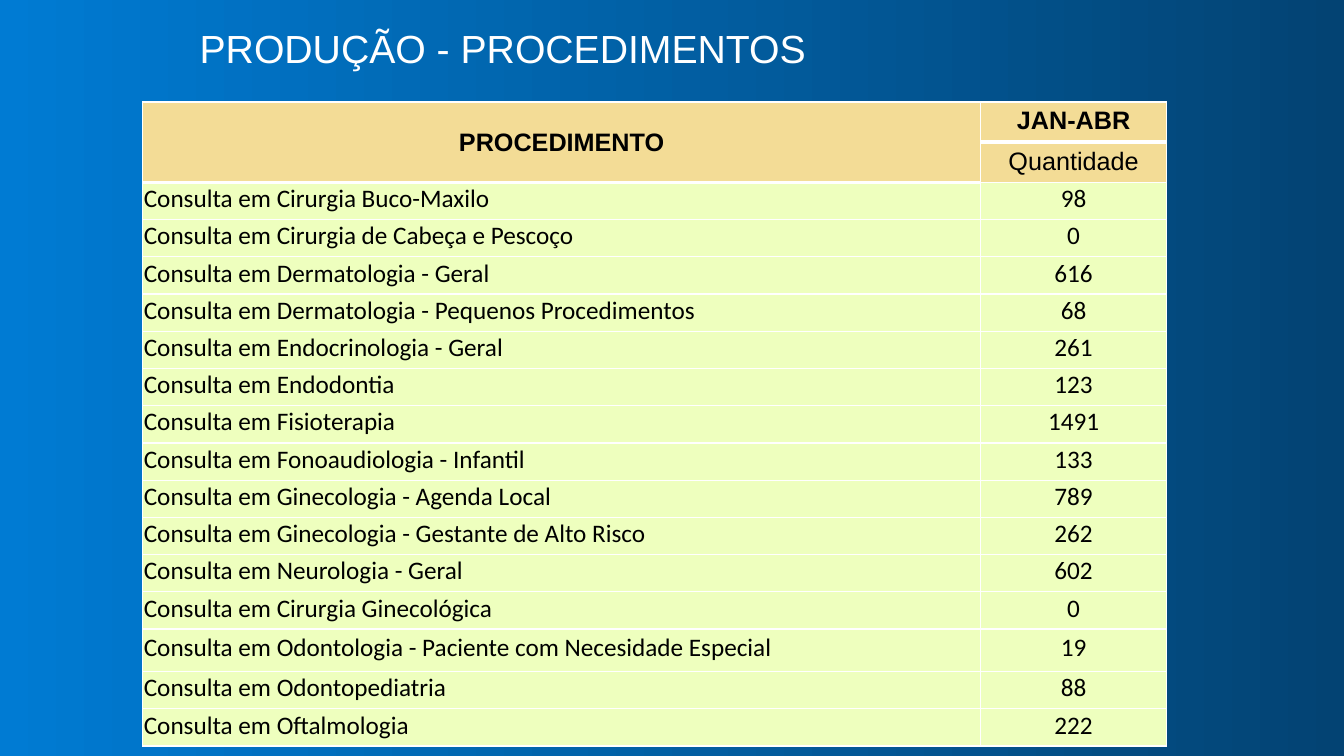
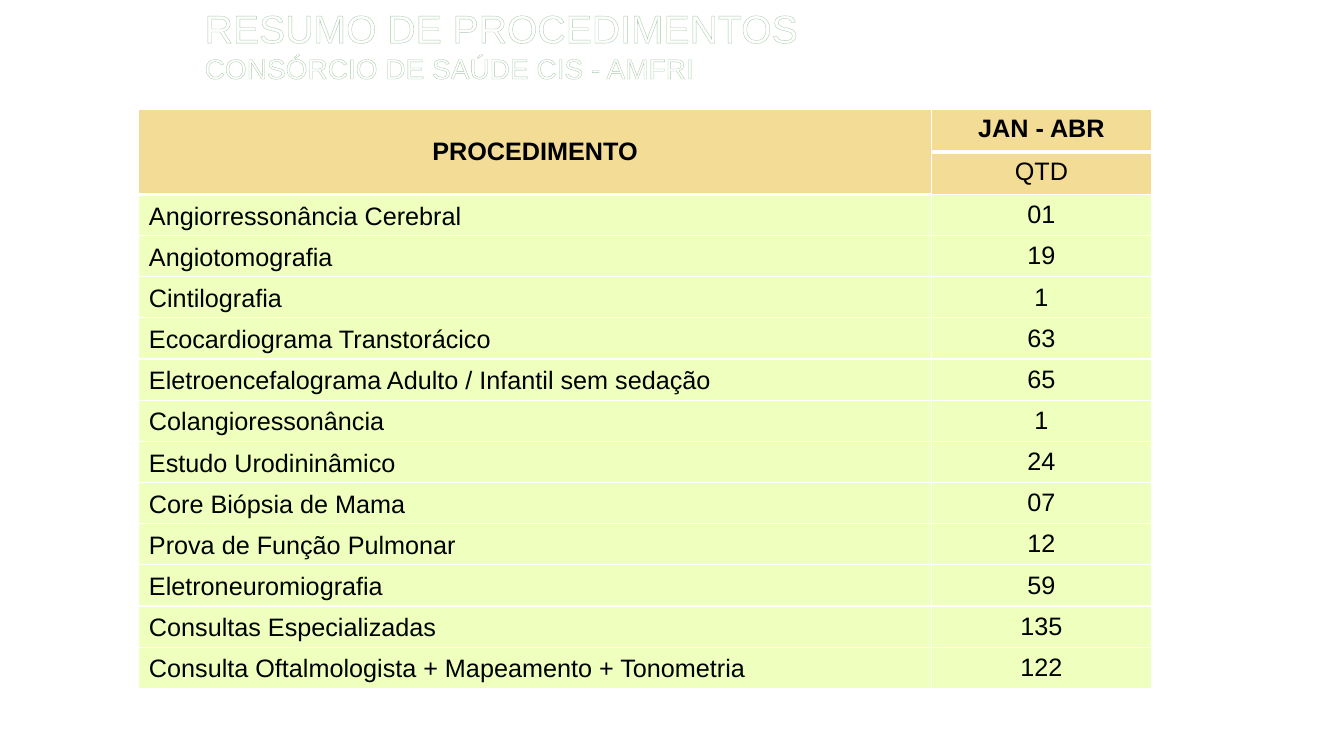
from pptx import Presentation
from pptx.dml.color import RGBColor
from pptx.enum.text import MSO_ANCHOR as Anchor, PP_ALIGN as Align
from pptx.oxml import parse_xml
from pptx.oxml.ns import nsdecls
from pptx.util import Pt

WHITE, BLACK, GOLD, LIME = "FFFFFF", "000000", "F3DC96", "EEFFBE"
BLUE, NAVY, MINT = "007BD3", "034373", "AACAAA"

SLIDES = [
    {
        "back": [BLUE, NAVY],
        "title": [("PRODUÇÃO - PROCEDIMENTOS", 28)],
        "outline": None,
        "title_box": (135.4, 0, 756, 67.7),
        "origin": (102, 72.9),
        "widths": (598.4, 133),
        "head_high": 28.7,
        "row_high": 26.6,
        "tall": {12: 30.4},
        "font": "Calibri",
        "inset": (0.75, 0.75, 0.75, 3.6),
        "anchor": Anchor.MIDDLE,
        "head": ("PROCEDIMENTO", "JAN-ABR", "Quantidade"),
        "rows": [
            ("Consulta em Cirurgia Buco-Maxilo", "98"),
            ("Consulta em Cirurgia de Cabeça e Pescoço", "0"),
            ("Consulta em Dermatologia - Geral", "616"),
            ("Consulta em Dermatologia - Pequenos Procedimentos", "68"),
            ("Consulta em Endocrinologia - Geral", "261"),
            ("Consulta em Endodontia", "123"),
            ("Consulta em Fisioterapia", "1491"),
            ("Consulta em Fonoaudiologia - Infantil", "133"),
            ("Consulta em Ginecologia - Agenda Local", "789"),
            ("Consulta em Ginecologia - Gestante de Alto Risco", "262"),
            ("Consulta em Neurologia - Geral", "602"),
            ("Consulta em Cirurgia Ginecológica", "0"),
            ("Consulta em Odontologia - Paciente com Necesidade Especial", "19"),
            ("Consulta em Odontopediatria", "88"),
            ("Consulta em Oftalmologia", "222"),
        ],
    },
    {
        "back": [WHITE],
        "title": [("RESUMO DE PROCEDIMENTOS", 28),
                  ("CONSÓRCIO DE SAÚDE CIS - AMFRI", 20)],
        "outline": MINT,
        "title_box": (139, 8.6, 703.4, 46.1),
        "origin": (99.2, 78.5),
        "widths": (566, 157.4),
        "head_high": 30.2,
        "row_high": 29.4,
        "tall": {},
        "font": "Arial",
        "inset": (7.2, 3.6, 7.2, 3.6),
        "anchor": Anchor.BOTTOM,
        "head": ("PROCEDIMENTO", "JAN - ABR", "QTD"),
        "rows": [
            ("Angiorressonância Cerebral", "01"),
            ("Angiotomografia", "19"),
            ("Cintilografia", "1"),
            ("Ecocardiograma Transtorácico", "63"),
            ("Eletroencefalograma Adulto / Infantil sem sedação", "65"),
            ("Colangioressonância", "1"),
            ("Estudo Urodininâmico", "24"),
            ("Core Biópsia de Mama", "07"),
            ("Prova de Função Pulmonar", "12"),
            ("Eletroneuromiografia", "59"),
            ("Consultas Especializadas", "135"),
            ("Consulta Oftalmologista + Mapeamento + Tonometria", "122"),
        ],
    },
]


def paint(color, code):
    color.rgb = RGBColor.from_string(code)


def line(tag, width, code):
    return parse_xml(
        f'<a:{tag} {nsdecls("a")} w="{int(Pt(width))}"><a:solidFill>'
        f'<a:srgbClr val="{code}"/></a:solidFill></a:{tag}>')


def style(run, size, face, code, bold=False):
    font = run.font
    font.size, font.name, font.bold = Pt(size), face, bold
    paint(font.color, code)


def set_back(slide, codes):
    fill = slide.background.fill
    if len(codes) == 1:
        fill.solid()
        paint(fill.fore_color, codes[0])
        return
    fill.gradient()
    fill.gradient_angle = 0
    for stop, code in zip(fill.gradient_stops, codes):
        paint(stop.color, code)


def add_title(slide, data):
    title = slide.shapes.title
    title.left, title.top, title.width, title.height = map(Pt, data["title_box"])
    frame = title.text_frame
    frame.text = "\n".join(text for text, _ in data["title"])
    frame.vertical_anchor = Anchor.MIDDLE
    for para, (_, size) in zip(frame.paragraphs, data["title"]):
        para.alignment = Align.LEFT
        run = para.runs[0]
        style(run, size, "Arial", WHITE)
        if data["outline"]:
            run.font._element.insert(0, line("ln", 0.8, data["outline"]))


def rule(row, col):
    return 3 if row == 0 or (row == 1 and col == 0) else 1


def fill_cell(cell, row, col, text, data):
    head = row < 2
    props = cell._tc.get_or_add_tcPr()
    above = rule(row - 1, col) if row else 1
    for tag, width in (("lnL", 1), ("lnR", 1), ("lnT", above),
                       ("lnB", rule(row, col))):
        props.append(line(tag, width, WHITE))
    cell.fill.solid()
    paint(cell.fill.fore_color, GOLD if head else LIME)
    if head:
        cell.vertical_anchor = Anchor.TOP if col else Anchor.MIDDLE
    else:
        cell.vertical_anchor = Anchor.MIDDLE if col else data["anchor"]
        (cell.margin_left, cell.margin_top,
         cell.margin_right, cell.margin_bottom) = map(Pt, data["inset"])
    if text:
        cell.text_frame.text = text
        para = cell.text_frame.paragraphs[0]
        para.alignment = Align.CENTER if head or col else Align.LEFT
        style(para.runs[0], 18, "Arial" if head else data["font"], BLACK, row == 0)


def add_grid(slide, data):
    name, span, unit = data["head"]
    rows = [(name, span), ("", unit)] + data["rows"]
    highs = [data["head_high"]] * 2 + [
        data["tall"].get(i, data["row_high"]) for i in range(len(data["rows"]))]
    left, top = data["origin"]
    table = slide.shapes.add_table(
        len(rows), 2, Pt(left), Pt(top),
        Pt(sum(data["widths"])), Pt(sum(highs))).table
    table.first_row = table.horz_banding = False
    for col, width in zip(table.columns, data["widths"]):
        col.width = Pt(width)
    for r, (texts, high) in enumerate(zip(rows, highs)):
        table.rows[r].height = Pt(high)
        for c, text in enumerate(texts):
            fill_cell(table.cell(r, c), r, c, text, data)
    table.cell(0, 0).merge(table.cell(1, 0))


def main():
    deck = Presentation()
    deck.slide_width, deck.slide_height = Pt(960), Pt(540)
    for data in SLIDES:
        slide = deck.slides.add_slide(deck.slide_layouts[5])
        set_back(slide, data["back"])
        add_title(slide, data)
        add_grid(slide, data)
    deck.save("out.pptx")


if __name__ == "__main__":
    main()
